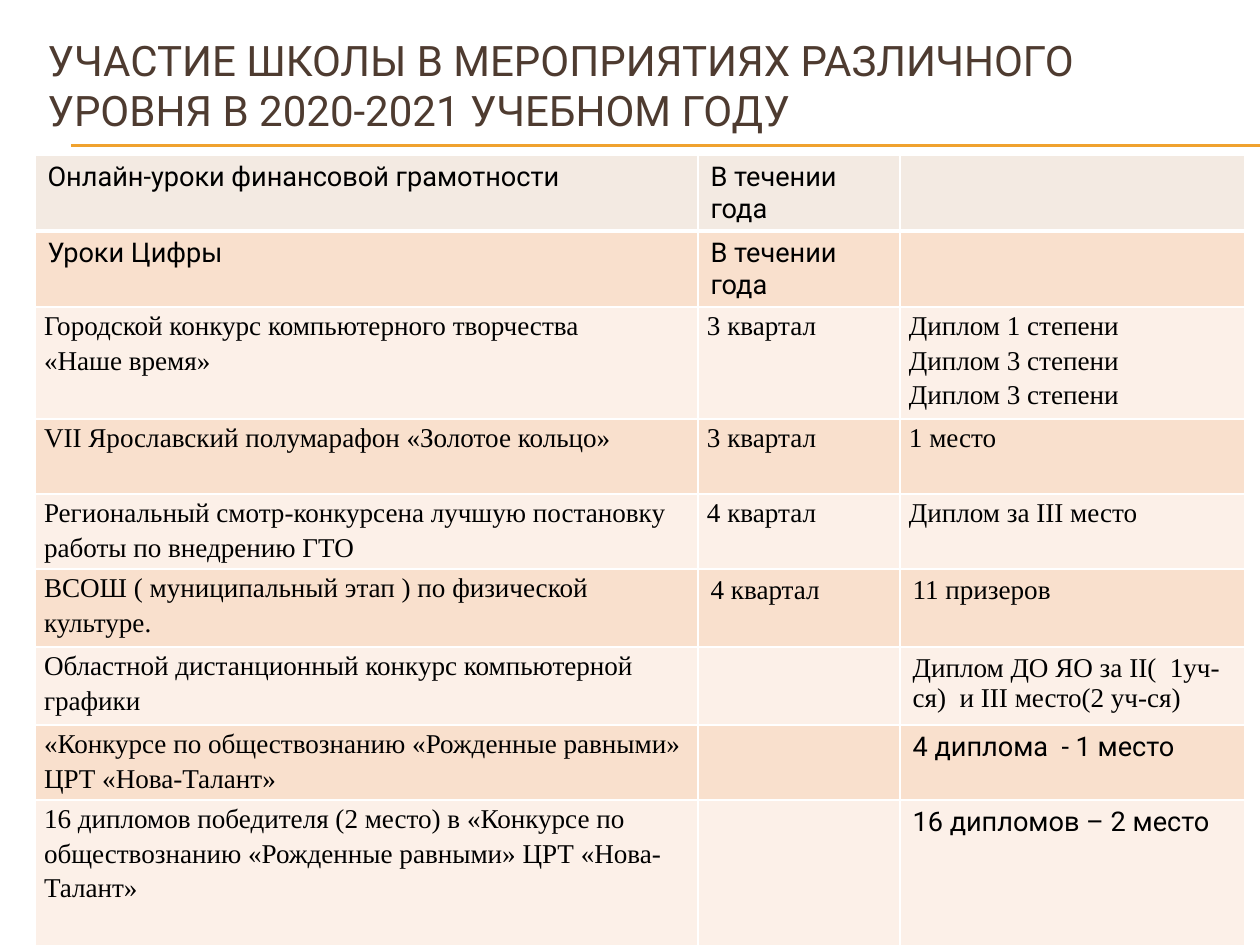
from dataclasses import dataclass

from lxml import etree
from pptx import Presentation
from pptx.dml.color import RGBColor
from pptx.enum import shapes, text
from pptx.oxml import ns
from pptx.util import Pt

PX = 914400 / 126


@dataclass(frozen=True)
class Theme:
    """Colours, fonts and type sizes of the slide."""
    title: str = "4E3B30"
    ink: str = "000000"
    rule: str = "F0A22E"
    edge: str = "FFFFFF"
    head: str = "F3EAE2"
    bands: tuple = ("FCF0E8", "F9E0CD")
    sans: str = "Roboto"
    serif: str = "Times New Roman"
    big: float = 24
    small: float = 15.5


THEME = Theme()
TITLE = "УЧАСТИЕ ШКОЛЫ В МЕРОПРИЯТИЯХ РАЗЛИЧНОГО УРОВНЯ В 2020-2021 УЧЕБНОМ ГОДУ"
COLS = (663, 202, 345)
ROWS = (65, 65, 112, 75, 75, 78, 78, 75, 150)
SANS, SERIF, TIGHT = "sans", "serif", "tight"
DATA = (
    (("Онлайн-уроки финансовой грамотности", SANS), ("В течении года", SANS), None),
    (("Уроки Цифры", SANS), ("В течении года", SANS), None),
    (("Городской конкурс компьютерного творчества\n«Наше время»", TIGHT),
     ("3 квартал", TIGHT),
     ("Диплом 1 степени\nДиплом 3 степени\nДиплом 3 степени", TIGHT)),
    (("VII Ярославский полумарафон «Золотое кольцо»", TIGHT),
     ("3 квартал", TIGHT), ("1 место", TIGHT)),
    (("Региональный смотр-конкурсена лучшую постановку работы по внедрению ГТО", TIGHT),
     ("4 квартал", TIGHT), ("Диплом за III место", TIGHT)),
    (("ВСОШ ( муниципальный этап ) по физической культуре.", TIGHT),
     ("4 квартал", SERIF), ("11 призеров", SERIF)),
    (("Областной дистанционный конкурс компьютерной графики", TIGHT), None,
     ("Диплом ДО ЯО за II(  1уч-ся)  и III место(2 уч-ся)", SERIF)),
    (("«Конкурсе по обществознанию «Рожденные равными» ЦРТ «Нова-Талант»", TIGHT), None,
     ("4 диплома  - 1 место", SANS)),
    (("16 дипломов победителя (2 место) в «Конкурсе по обществознанию "
      "«Рожденные равными» ЦРТ «Нова-Талант»", TIGHT), None,
     ("16 дипломов – 2 место", SANS)),
)


def px(n):
    """Turn pixels into EMU."""
    return round(n * PX)


def ink(frame, font, size, color):
    """Format every run of a text frame."""
    for para in frame.paragraphs:
        for run in para.runs:
            run.font.name = font
            run.font.size = Pt(size)
            run.font.color.rgb = RGBColor.from_string(color)


def edges(cell, base):
    """Draw the four cell borders, the bottom one at the given width."""
    props = cell._tc.get_or_add_tcPr()
    for i, side in enumerate("LRTB"):
        width = Pt(base if side == "B" else 1)
        line = etree.Element(ns.qn(f"a:ln{side}"), w=str(width))
        fill = etree.SubElement(line, ns.qn("a:solidFill"))
        etree.SubElement(fill, ns.qn("a:srgbClr"), val=THEME.edge)
        props.insert(i, line)


def write(cell, words, style):
    """Put text into a cell in one of the three styles."""
    frame = cell.text_frame
    frame.text = words
    ink(frame, THEME.sans if style == SANS else THEME.serif, THEME.small, THEME.ink)
    if style == TIGHT:
        cell.margin_left = cell.margin_right = px(9)
        cell.margin_top = cell.margin_bottom = 0
        for para in frame.paragraphs:
            para.line_spacing = 1.15


def title(slide, x, y, w, h):
    """Place the slide title in its box."""
    shape = slide.shapes.title
    shape.left, shape.top, shape.width, shape.height = map(px, (x, y, w, h))
    frame = shape.text_frame
    frame.text = TITLE
    frame.word_wrap = True
    frame.auto_size = text.MSO_AUTO_SIZE.NONE
    frame.vertical_anchor = text.MSO_ANCHOR.MIDDLE
    frame.paragraphs[0].alignment = text.PP_ALIGN.LEFT
    ink(frame, THEME.sans, THEME.big, THEME.title)


def rules(slide, x, y, w):
    """Draw the double rule under the title."""
    for top in (y, y + 1):
        line = slide.shapes.add_connector(
            shapes.MSO_CONNECTOR.STRAIGHT, px(x), px(top), px(x + w), px(top))
        line.line.color.rgb = RGBColor.from_string(THEME.rule)
        line.line.width = Pt(0.75)
        etree.SubElement(line._element.spPr, ns.qn("a:effectLst"))


def grid(slide, x, y):
    """Build the table of events, dates and results."""
    table = slide.shapes.add_table(
        len(ROWS), len(COLS), px(x), px(y), px(sum(COLS)), px(sum(ROWS))).table
    table.first_row = table.horz_banding = False
    for col, w in zip(table.columns, COLS):
        col.width = px(w)
    for r, (row, h, items) in enumerate(zip(table.rows, ROWS, DATA)):
        row.height = px(h)
        for cell, item in zip(row.cells, items):
            cell.fill.solid()
            color = THEME.bands[r % 2] if r else THEME.head
            cell.fill.fore_color.rgb = RGBColor.from_string(color)
            edges(cell, 1 if r else 3)
            if item:
                write(cell, *item)


def main():
    """Build and save the slide."""
    deck = Presentation()
    deck.slide_width, deck.slide_height = px(1260), px(945)
    slide = deck.slides.add_slide(deck.slide_layouts[5])
    rules(slide, 71, 145, 1189)
    title(slide, 35, 27, 1197, 116)
    grid(slide, 35, 155)
    deck.save("out.pptx")


if __name__ == "__main__":
    main()
